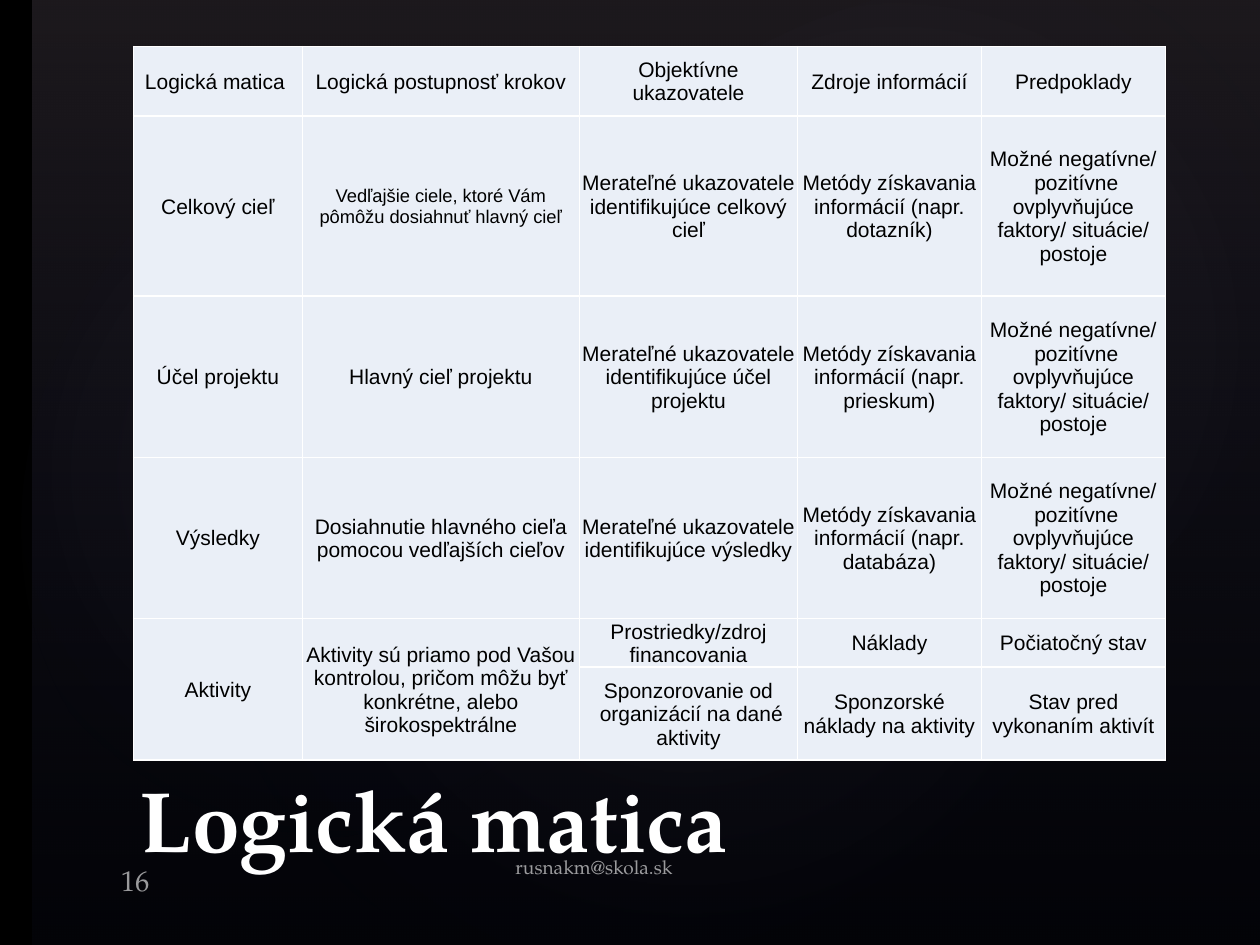
from lxml.etree import SubElement
from pptx import Presentation
from pptx.dml.color import RGBColor
from pptx.enum.shapes import MSO_SHAPE
from pptx.enum.text import MSO_ANCHOR, MSO_AUTO_SIZE, PP_ALIGN
from pptx.oxml import parse_xml
from pptx.oxml.ns import nsdecls, qn
from pptx.util import Inches, Pt

BLACK = RGBColor(0x00, 0x00, 0x00)
WHITE = RGBColor(0xFF, 0xFF, 0xFF)
CELL_FILL = RGBColor(0xEA, 0xEF, 0xF7)
PLUM = RGBColor(0x50, 0x46, 0x52)
LILAC = RGBColor(0xC4, 0xBC, 0xC6)
NAVY = RGBColor(0x24, 0x28, 0x52)

TITLE_FONT = "TeX Gyre Pagella"
TABLE_FONT = "Arial"

LINEAR_DOWN = '<a:lin ang="5400000" scaled="0"/>'
FROM_CENTRE = ('<a:path path="circle"><a:fillToRect l="50000" t="50000" '
               'r="50000" b="50000"/></a:path>')

# left, top, width, height, rotation, opacity at the centre
GLOWS = [
    (1.5, 1.14, 7.92, 6.24, 328.7, 7),
    (-0.3, 1.28, 6.06, 4.9, 294.3, 8),
    (3.58, 0.13, 7.09, 5.2, 328.7, 8),
]

COLUMN_WIDTHS = [1.34, 2.2, 1.73, 1.46, 1.46]
ROW_HEIGHTS = [0.55, 1.43, 1.28, 1.28, 0.37, 0.74]
ASSUMPTIONS = "Možné negatívne/\v pozitívne ovplyvňujúce faktory/ situácie/ postoje"
SUBGOALS = "Vedľajšie ciele, ktoré Vám pômôžu dosiahnuť hlavný cieľ"
MATRIX = [
    ["Logická matica ", "Logická postupnosť krokov", "Objektívne ukazovatele",
     "Zdroje informácií", "Predpoklady"],
    ["Celkový cieľ", SUBGOALS,
     "Merateľné ukazovatele identifikujúce celkový cieľ",
     "Metódy získavania informácií (napr. dotazník)", ASSUMPTIONS],
    ["Účel projektu", "Hlavný cieľ projektu",
     "Merateľné ukazovatele identifikujúce účel projektu",
     "Metódy získavania informácií (napr. prieskum)", ASSUMPTIONS],
    ["Výsledky", "Dosiahnutie hlavného cieľa pomocou vedľajších cieľov",
     "Merateľné ukazovatele identifikujúce výsledky",
     "Metódy získavania informácií (napr. databáza)", ASSUMPTIONS],
    ["Aktivity",
     "Aktivity sú priamo pod Vašou kontrolou, pričom môžu byť konkrétne, "
     "alebo širokospektrálne",
     "Prostriedky/zdroj financovania", "Náklady", "Počiatočný stav"],
    ["", "", "Sponzorovanie od\v organizácií na dané aktivity",
     "Sponzorské náklady na aktivity", "Stav pred vykonaním aktivít"],
]


def add_gradient_shape(slide, preset, box, stops, direction, rotation=0):
    """Stops are (position, colour, opacity), the numbers in percent."""
    shape = slide.shapes.add_shape(preset, *map(Inches, box))
    shape.rotation = rotation
    shape.shadow.inherit = False
    shape.line.fill.background()
    stop_xml = "".join(
        f'<a:gs pos="{position * 1000}"><a:srgbClr val="{color}">'
        f'<a:alpha val="{opacity * 1000}"/></a:srgbClr></a:gs>'
        for position, color, opacity in stops)
    gradient = parse_xml(f'<a:gradFill {nsdecls("a")} rotWithShape="1">'
                         f'<a:gsLst>{stop_xml}</a:gsLst>{direction}</a:gradFill>')
    shape._element.spPr.find(qn("a:prstGeom")).addnext(gradient)


def add_backdrop(slide):
    slide.background.fill.solid()
    slide.background.fill.fore_color.rgb = BLACK
    add_gradient_shape(slide, MSO_SHAPE.RECTANGLE, (0.26, 0, 10, 7.5),
                       [(0, PLUM, 36), (100, NAVY, 10)], LINEAR_DOWN)
    for *box, rotation, opacity in GLOWS:
        add_gradient_shape(slide, MSO_SHAPE.OVAL, box,
                           [(0, LILAC, opacity), (58, NAVY, 0)],
                           FROM_CENTRE, rotation)


def add_borders(cell):
    properties = cell._tc.get_or_add_tcPr()
    for index, side in enumerate(("lnL", "lnR", "lnT", "lnB")):
        properties.insert(index, parse_xml(
            f'<a:{side} {nsdecls("a")} w="{Pt(1)}"><a:solidFill>'
            f'<a:srgbClr val="{WHITE}"/></a:solidFill></a:{side}>'))


def format_cell(cell, text):
    cell.text_frame.text = text
    cell.vertical_anchor = MSO_ANCHOR.MIDDLE
    cell.margin_left = cell.margin_right = cell.margin_top = Inches(0.01)
    cell.margin_bottom = 0
    paragraph = cell.text_frame.paragraphs[0]
    paragraph.alignment = PP_ALIGN.CENTER
    paragraph.font.name = TABLE_FONT
    paragraph.font.size = Pt(10.5 if text == SUBGOALS else 12)
    paragraph.font.color.rgb = BLACK
    cell.fill.solid()
    cell.fill.fore_color.rgb = CELL_FILL
    add_borders(cell)


def add_matrix(slide, left, top):
    table = slide.shapes.add_table(
        len(MATRIX), len(COLUMN_WIDTHS), Inches(left), Inches(top),
        Inches(sum(COLUMN_WIDTHS)), Inches(sum(ROW_HEIGHTS))).table
    table.first_row = table.horz_banding = False
    for column, width in zip(table.columns, COLUMN_WIDTHS):
        column.width = Inches(width)
    for row, height, texts in zip(table.rows, ROW_HEIGHTS, MATRIX):
        row.height = Inches(height)
        for cell, text in zip(row.cells, texts):
            format_cell(cell, text)
    for column in (0, 1):
        table.cell(4, column).merge(table.cell(5, column))


def format_text(shape, text, size, anchor, bottom=0.06, opacity=100):
    frame = shape.text_frame
    frame.text = text
    frame.word_wrap = True
    frame.auto_size = MSO_AUTO_SIZE.NONE
    frame.vertical_anchor = anchor
    frame.margin_left = frame.margin_right = Inches(0.11)
    frame.margin_top = Inches(0.06)
    frame.margin_bottom = Inches(bottom)
    paragraph = frame.paragraphs[0]
    paragraph.alignment = PP_ALIGN.LEFT
    font = paragraph.font
    font.name = TITLE_FONT
    font.size = Pt(size)
    font.color.rgb = WHITE
    if opacity < 100:
        color = next(paragraph._p.iter(qn("a:srgbClr")))
        SubElement(color, qn("a:alpha")).set("val", str(opacity * 1000))
    return font


def place_title(slide, left, top, width, height):
    title = slide.shapes.title
    title.left, title.top = Inches(left), Inches(top)
    title.width, title.height = Inches(width), Inches(height)
    format_text(title, "Logická matica", 49, MSO_ANCHOR.BOTTOM).bold = True
    slide.shapes._spTree.append(title._element)  # in front of the table


def add_footer(slide):
    number = slide.shapes.add_textbox(*map(Inches, (0.85, 6.79, 0.82, 0.34)))
    format_text(number, "16", 16.3, MSO_ANCHOR.BOTTOM, bottom=0.01, opacity=60)
    address = slide.shapes.add_textbox(*map(Inches, (3.98, 6.73, 2.23, 0.4)))
    format_text(address, "rusnakm@skola.sk", 10.9, MSO_ANCHOR.TOP, opacity=60)


def main():
    presentation = Presentation()
    presentation.slide_width = Inches(10)
    presentation.slide_height = Inches(7.5)
    slide = presentation.slides.add_slide(presentation.slide_layouts[5])
    add_backdrop(slide)
    add_matrix(slide, 1.06, 0.37)
    place_title(slide, 1, 5.96, 8.25, 1)
    add_footer(slide)
    presentation.save("out.pptx")


if __name__ == "__main__":
    main()
